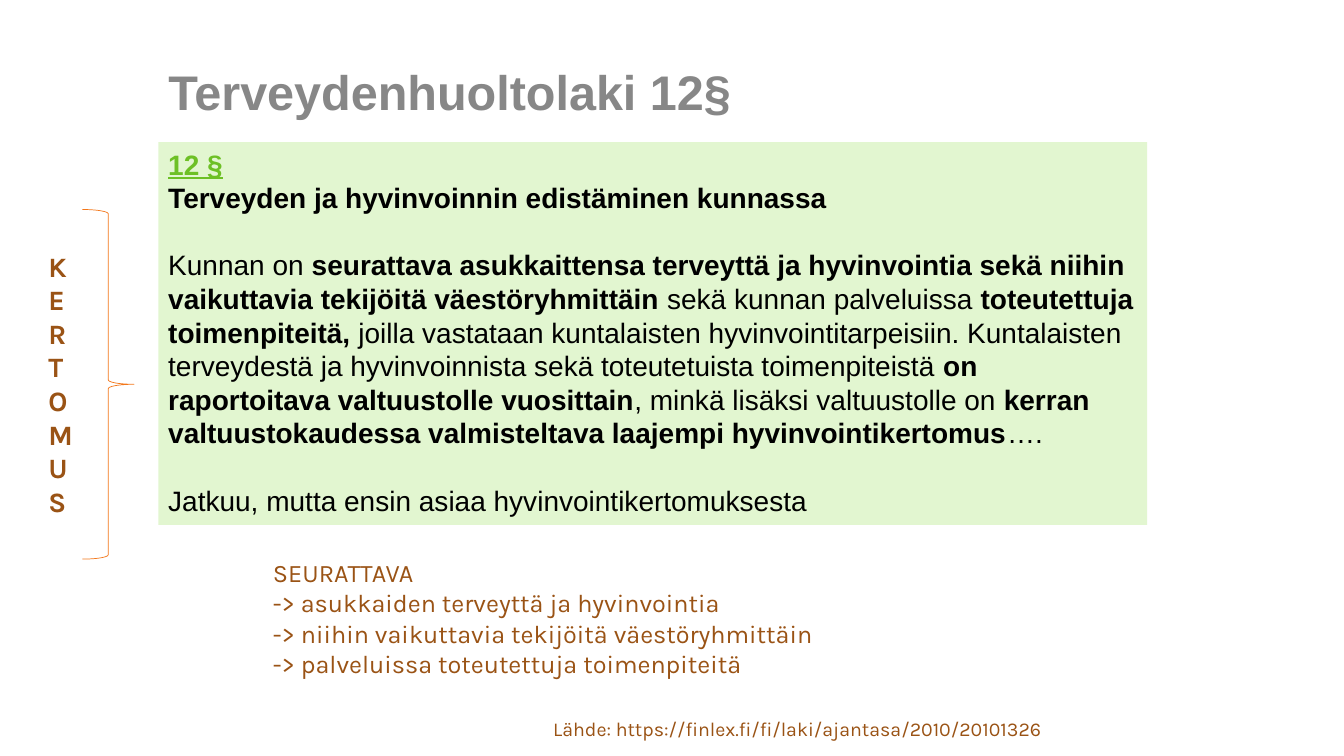
from pptx import Presentation
from pptx import util as u
from pptx.dml import color
from pptx.enum import shapes, text


def rgb(value):
    return color.RGBColor.from_string(value)


def style(para, size, name, value, bold=None):
    para.alignment = text.PP_ALIGN.LEFT
    para.font.size = u.Pt(size)
    para.font.name = name
    para.font.color.rgb = rgb(value)
    para.font.bold = bold


deck = Presentation()
deck.slide_width, deck.slide_height = u.Cm(33.87), u.Cm(19.05)
page = deck.slides.add_slide(deck.slide_layouts[5])

title = page.shapes.title
title.left, title.top, title.width, title.height = u.Cm(3.99), u.Cm(0), u.Cm(22.68), u.Cm(3.18)
title.text_frame.text = "Terveydenhuoltolaki 12§"
title.text_frame.auto_size = text.MSO_AUTO_SIZE.NONE
title.text_frame.vertical_anchor = text.MSO_ANCHOR.BOTTOM
title.text_frame.paragraphs[0].line_spacing = 0.9
style(title.text_frame.paragraphs[0], 34.7, "Arial", "878787", True)

law = page.shapes.add_shape(
    shapes.MSO_SHAPE.RECTANGLE, u.Cm(3.99), u.Cm(3.58), u.Cm(24.92), u.Cm(9.65))
law.shadow.inherit = False
law.fill.solid()
law.fill.fore_color.rgb = rgb("E2F6D0")
law.line.fill.background()
law.text_frame.word_wrap = True
law.text_frame.vertical_anchor = text.MSO_ANCHOR.TOP

law_paragraphs = [
    (0, "6DC025", [("12 §", True)]),
    (0, "000000", [("Terveyden ja hyvinvoinnin edistäminen kunnassa", True)]),
    (24, "000000", [
        ("Kunnan on ", False),
        ("seurattava asukkaittensa terveyttä ja hyvinvointia sekä niihin "
         "vaikuttavia tekijöitä väestöryhmittäin ", True),
        ("sekä kunnan palveluissa ", False),
        ("toteutettuja toimenpiteitä, ", True),
        ("joilla vastataan kuntalaisten hyvinvointitarpeisiin. Kuntalaisten terveydestä "
         "ja hyvinvoinnista sekä toteutetuista toimenpiteistä ", False),
        ("on raportoitava valtuustolle vuosittain", True),
        (", minkä lisäksi valtuustolle on ", False),
        ("kerran valtuustokaudessa valmisteltava laajempi hyvinvointikertomus", True),
        ("….", False),
    ]),
    (24, "000000", [("Jatkuu, mutta ensin asiaa hyvinvointikertomuksesta", False)]),
]
for index, (gap, ink, spans) in enumerate(law_paragraphs):
    para = law.text_frame.paragraphs[0] if index == 0 else law.text_frame.add_paragraph()
    style(para, 20, "Arial", ink)
    para.space_before = u.Pt(gap)
    para.line_spacing = u.Pt(24)
    for words, bold in spans:
        span = para.add_run()
        span.text = words
        span.font.bold = bold
law.text_frame.paragraphs[0].runs[0].font.underline = True

notes = [
    (13.69, 17.93, 15.32, 0.86, 14, None,
     ["Lähde: https://finlex.fi/fi/laki/ajantasa/2010/20101326"]),
    (6.63, 13.92, 15.9, 3.33, 18, None,
     ["SEURATTAVA",
      "-> asukkaiden terveyttä ja hyvinvointia",
      "-> niihin vaikuttavia tekijöitä väestöryhmittäin",
      "-> palveluissa toteutettuja toimenpiteitä"]),
    (0.97, 6.15, 1.12, 7.09, 20, True, ["KERTOMUS"]),
]
for left, top, width, height, size, bold, lines in notes:
    box = page.shapes.add_textbox(u.Cm(left), u.Cm(top), u.Cm(width), u.Cm(height))
    box.text_frame.word_wrap = True
    box.text_frame.text = "\n".join(lines)
    for para in box.text_frame.paragraphs:
        style(para, size, "Karla", "9A5315", bold)
        para.line_spacing = u.Pt(size * 1.2)

brace = page.shapes.add_shape(
    shapes.MSO_SHAPE.RIGHT_BRACE, u.Cm(2.08), u.Cm(5.28), u.Cm(1.3), u.Cm(8.81))
brace.shadow.inherit = False
brace.fill.background()
brace.line.color.rgb = rgb("F3771A")
brace.line.width = u.Pt(0.5)

deck.save("out.pptx")
